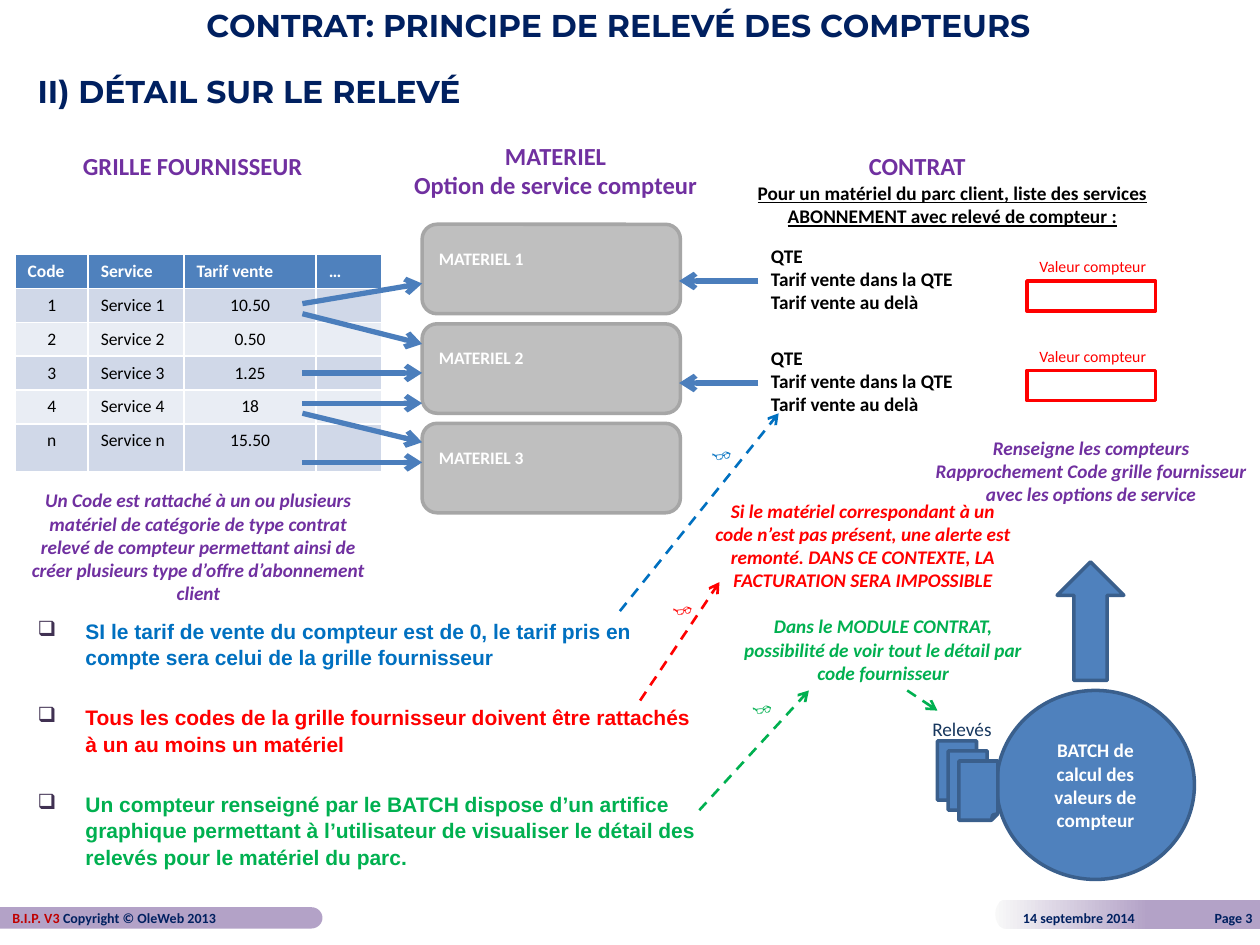
import math
import lxml.etree
import pptx
import pptx.dml.color
import pptx.enum.shapes
import pptx.enum.text
import pptx.oxml.ns
import pptx.util

deck = pptx.Presentation()
deck.slide_width = pptx.util.Inches(10)
deck.slide_height = pptx.util.Inches(7.5)
unit = deck.slide_width // 100
slide = deck.slides.add_slide(deck.slide_layouts[6])
items = slide.shapes
kinds = pptx.enum.shapes.MSO_SHAPE
sides = pptx.enum.text.PP_ALIGN
mid = pptx.enum.text.MSO_ANCHOR.MIDDLE
qn = pptx.oxml.ns.qn
navy, violet, steel, edge = "002060", "7030A0", "4F81BD", "3A5F8C"
red, green, blue, white, black = "FF0000", "00B050", "0070C0", "FFFFFF", "000000"
mauve = "B3A2C7"


def hue(code):
    return pptx.dml.color.RGBColor.from_string(code)


def write(frame, text, size, shade, style="b", side="l", face="Calibri"):
    frame.text = text
    frame.word_wrap = True
    for line in frame.paragraphs:
        line.alignment = {"l": sides.LEFT, "c": sides.CENTER, "r": sides.RIGHT}[side]
        line.font.size = pptx.util.Pt(size)
        line.font.name = face
        line.font.bold = "b" in style
        line.font.italic = "i" in style
        line.font.underline = "u" in style
        line.font.color.rgb = hue(shade)


for flat, hub, wide, top, tall in [(0, 24.7, 0.9, 72, 1.7), (100, 79.8, 0.8, 71.4, 2.3)]:
    turn = 1 if hub > flat else -1
    arc = []
    for step in range(13):
        angle = math.pi * step / 12
        across = hub + turn * wide * math.sin(angle)
        down = top + tall / 2 * (1 - math.cos(angle))
        arc.append((across * unit, down * unit))
    path = items.build_freeform(flat * unit, int(top * unit))
    path.add_line_segments(arc + [(flat * unit, (top + tall) * unit)])
    bar = path.convert_to_shape()
    bar.shadow.inherit = False
    bar.line.fill.background()
    if turn > 0:
        bar.fill.solid()
        bar.fill.fore_color.rgb = hue(mauve)
    else:
        bar.fill.gradient()
        bar.fill.gradient_angle = 0
        for stop, shade, place in zip(bar.fill.gradient_stops, ["F8F8F8", mauve], [0, 0.58]):
            stop.color.rgb = hue(shade)
            stop.position = place

data = [
    ["Code", "Service", "Tarif vente", "…"],
    ["1", "Service 1", "10.50", ""],
    ["2", "Service 2", "0.50", ""],
    ["3", "Service 3", "1.25", ""],
    ["4", "Service 4", "18", ""],
    ["n", "Service n", "15.50", ""],
]
at = [int(n * unit) for n in (1.2, 20.2, 29.1, 17.1)]
grid = items.add_table(6, 4, *at).table
for col, wide in zip(grid.columns, [5.8, 7.6, 10.5, 5.2]):
    col.width = int(wide * unit)
for r, row in enumerate(data):
    grid.rows[r].height = int((3.8 if r == 5 else 2.67) * unit)
    for c, text in enumerate(row):
        cell = grid.cell(r, c)
        cell.fill.solid()
        cell.fill.fore_color.rgb = hue(steel if r == 0 else "D0D8E8" if r % 2 else "E9EDF4")
        side = "c" if r and c in (0, 2) else "l"
        write(cell.text_frame, text, 10, black if r else white, "" if r else "b", side)
        if not text:
            para = cell.text_frame.paragraphs[0]
            lxml.etree.SubElement(para._p, qn("a:endParaRPr"), sz="1000")

forms = [
    (kinds.ROUNDED_RECTANGLE, 33.5, 17.8 + 7.9 * n, 20.5, 7.1, "BFBFBF", "A6A6A6", f"MATERIEL {n + 1}")
    for n in range(3)
]
forms += [(kinds.RECTANGLE, 81.5, y, 10.2, 2.4, white, red, "") for y in (22.3, 29.4)]
forms += [
    (kinds.UP_ARROW, 83.9, 44.6, 5.3, 9.4, steel, edge, ""),
    (kinds.OVAL, 79.1, 54.8, 15.7, 15, steel, edge, "BATCH de calcul des valeurs de compteur"),
]
forms += [
    (kinds.FOLDED_CORNER, 74.4 + 0.85 * n, 58.8 + 0.8 * n, 3.1, 4.7, steel, edge, "")
    for n in range(3)
]
for kind, x, y, wide, tall, fill, rim, text in forms:
    form = items.add_shape(kind, *[int(n * unit) for n in (x, y, wide, tall)])
    form.shadow.inherit = False
    form.fill.solid()
    form.fill.fore_color.rgb = hue(fill)
    form.line.color.rgb = hue(rim)
    form.line.width = pptx.util.Pt(2)
    if text:
        form.text_frame.vertical_anchor = mid
        if kind == kinds.OVAL:
            write(form.text_frame, text, 11, white, "b", "c")
        else:
            write(form.text_frame, text, 10, white)
            form.text_frame.margin_bottom = int(2.2 * unit)

links = [
    (24, a, 33.5, b, "4B7EBC", 3)
    for a, b in [(32, 32), (36.7, 36.7), (32.8, 35.1), (29.6, 29.6), (24.1, 22.5), (24.9, 27.3)]
]
links += [(60.2, y, 53.9, y, "4B7EBC", 3) for y in (22.3, 30.4)]
links += [
    (50.8, 55.6, 57.1, 46.2, red, 1.5),
    (55.5, 64.3, 64.2, 54.8, green, 1.5),
    (72, 54.8, 74.4, 56.4, green, 1.5),
    (49.2, 48.5, 61.8, 32.8, blue, 1.5),
]
for *ends, shade, thick in links:
    link = items.add_connector(
        pptx.enum.shapes.MSO_CONNECTOR.STRAIGHT, *[int(n * unit) for n in ends]
    )
    link.line.color.rgb = hue(shade)
    link.line.width = pptx.util.Pt(thick)
    if thick < 3:
        link.line.dash_style = pptx.enum.dml.MSO_LINE.DASH
    lxml.etree.SubElement(link.line._get_or_add_ln(), qn("a:tailEnd"), type="arrow")
    lxml.etree.SubElement(link._element.spPr, qn("a:effectLst"))

price = "QTE\nTarif vente dans la QTE\nTarif vente au delà"
notes = [
    (15.4, 0, 83.5, 3.9, "CONTRAT: PRINCIPE DE RELEVÉ DES COMPTEURS", 18, navy, "b", "l", "Montserrat"),
    (2, 5.2, 96.9, 3.9, "II) DÉTAIL SUR LE RELEVÉ", 18, navy, "b", "l", "Montserrat"),
    (4.3, 11.5, 22, 3.4, "GRILLE FOURNISSEUR", 14, violet, "b", "c"),
    (30.3, 10.7, 27.6, 5.7, "MATERIEL\nOption de service compteur", 14, violet, "b", "c"),
    (67.3, 11.5, 11, 3.4, "CONTRAT", 14, violet, "b", "c"),
    (57.9, 13.9, 35.4, 4.7, "Pour un matériel du parc client, liste des services ABONNEMENT avec relevé de compteur :", 11, black, "bu", "c"),
    (60.2, 18.9, 18.1, 6.6, price, 11, black),
    (60.2, 27, 18.1, 6.6, price, 11, black),
    (81.5, 19.9, 11, 2.5, "Valeur compteur", 9, red, ""),
    (81.5, 27, 11, 2.5, "Valeur compteur", 9, red, ""),
    (1.2, 38.3, 29.1, 10.3, "Un Code est rattaché à un ou plusieurs matériel de catégorie de type contrat relevé de compteur permettant ainsi de créer plusieurs type d’offre d’abonnement client", 11, violet, "bi", "c"),
    (73.2, 34.1, 26.8, 6.6, "Renseigne les compteurs\nRapprochement Code grille fournisseur avec les options de service", 11, violet, "bi", "c"),
    (55.5, 39.1, 26, 8.4, "Si le matériel correspondant à un code n’est pas présent, une alerte est remonté. DANS CE CONTEXTE, LA FACTURATION SERA IMPOSSIBLE", 11, red, "bi", "c"),
    (57.1, 48.3, 26, 6.6, "Dans le MODULE CONTRAT, possibilité de voir tout le détail par code fournisseur", 11, green, "bi", "c"),
    (72, 56.4, 8.7, 2.9, "Relevés", 11, "17375E", "", "c"),
    (52.4, 46.9, 3.9, 2.9, "👓", 11, red),
    (58.7, 54.8, 3.9, 2.9, "👓", 11, green),
    (55.5, 34.6, 3.9, 2.9, "👓", 11, blue),
    (92.6, 71.7, 7.8, 2.4, "Page 3", 8, navy, "b", "r"),
    (80.2, 71.7, 12.9, 2.4, "14 septembre 2014", 8, navy),
    (0, 71.7, 25.6, 2.4, "B.I.P. V3 ", 8, "C00000"),
]
for x, y, wide, tall, *look in notes:
    box = items.add_textbox(*[int(n * unit) for n in (x, y, wide, tall)])
    write(box.text_frame, *look)
run = box.text_frame.paragraphs[0].add_run()
run.text = "Copyright © OleWeb 2013"
run.font.color.rgb = hue(navy)

rules = [
    ("SI le tarif de vente du compteur est de 0, le tarif pris en compte sera celui de la grille fournisseur", blue),
    ("Tous les codes de la grille fournisseur doivent être rattachés à un au moins un matériel", red),
    ("Un compteur renseigné par le BATCH dispose d’un artifice graphique permettant à l’utilisateur de visualiser le détail des relevés pour le matériel du parc.", green),
]
frame = items.add_textbox(*[int(n * unit) for n in (2, 48.5, 55.1, 21.3)]).text_frame
frame.text = "\n".join(text for text, shade in rules)
frame.word_wrap = True
for n, (line, (text, shade)) in enumerate(zip(frame.paragraphs, rules)):
    prop = line._p.get_or_add_pPr()
    prop.set("marL", str(int(3.8 * unit)))
    prop.set("indent", str(int(-3.8 * unit)))
    tint = lxml.etree.SubElement(prop, qn("a:buClr"))
    lxml.etree.SubElement(tint, qn("a:srgbClr"), val="403152")
    lxml.etree.SubElement(prop, qn("a:buChar"), char="❑")
    line.line_spacing = 1.05
    if n:
        line.space_before = pptx.util.Pt(19.2)
    line.font.size = pptx.util.Pt(12)
    line.font.name = "Arial"
    line.font.bold = True
    line.font.color.rgb = hue(shade)

deck.save("out.pptx")
